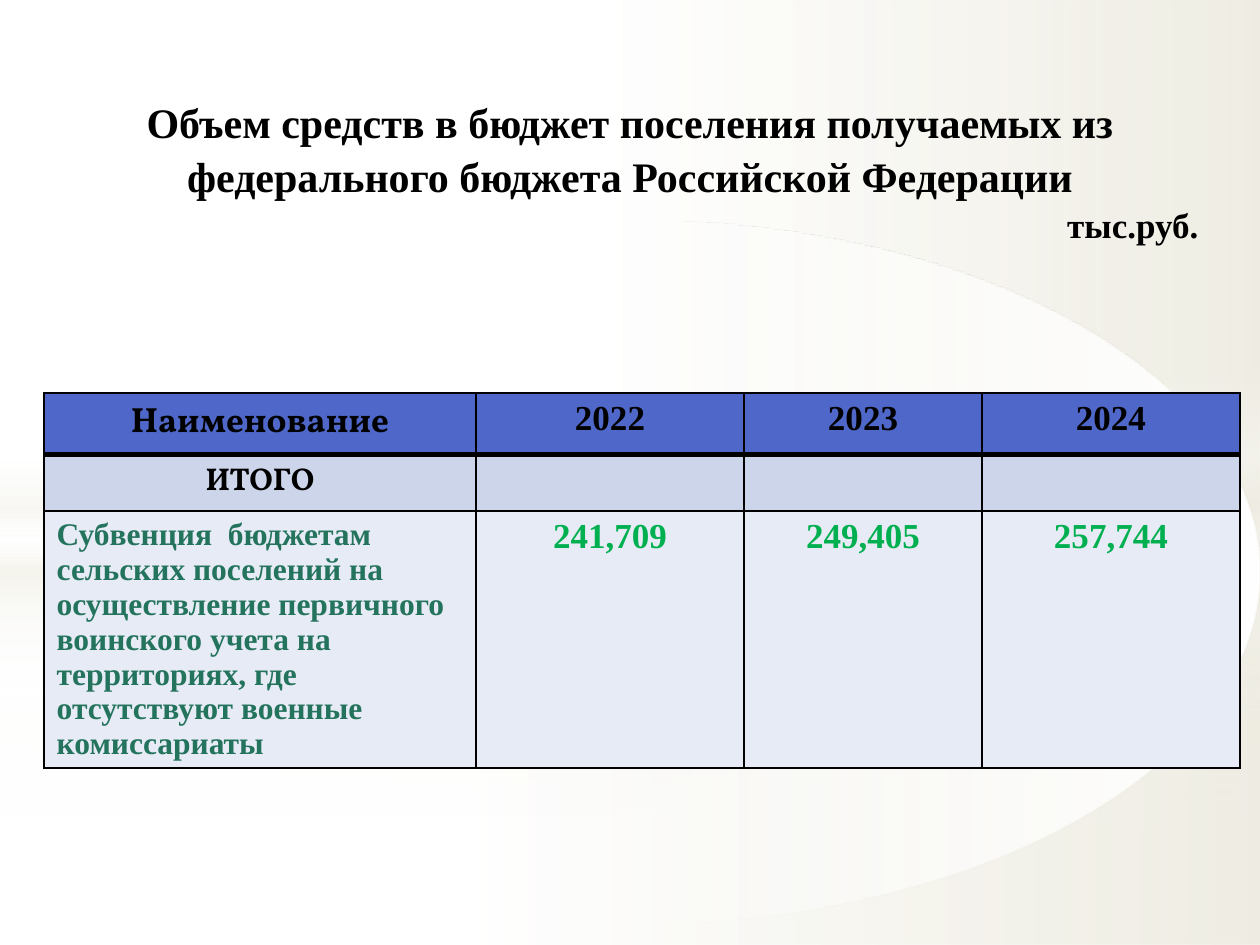
from lxml.etree import SubElement
from pptx import Presentation
from pptx.dml.color import RGBColor
from pptx.enum.shapes import MSO_SHAPE
from pptx.enum.text import MSO_ANCHOR, PP_ALIGN
from pptx.oxml import parse_xml
from pptx.oxml.ns import nsdecls, qn
from pptx.util import Pt

COLORS = {
    "white": "FFFFFF", "sand": "EEECE1", "black": "000000",
    "header": "4E67C8", "total": "CCD5EA", "body": "E7EBF5",
    "label": "23735D", "amount": "00B050",
}
SERIF = "Times New Roman"
DISPLAY = "Vollkorn"


def format_runs(paragraph, size, color, font_name=SERIF):
    for run in paragraph.runs:
        run.font.name = font_name
        run.font.size = Pt(size)
        run.font.bold = True
        run.font.color.rgb = RGBColor.from_string(COLORS[color])


def add_glow(slide, kind, top, height, angle, stops):
    """Add a full-width shape whose gradient stops are (position, color, opacity)."""
    shape = slide.shapes.add_shape(kind, 0, Pt(top), Pt(720), Pt(height))
    shape.shadow.inherit = False
    stop_xml = "".join(
        f'<a:gs pos="{position * 1000}"><a:srgbClr val="{COLORS[color]}">'
        f'<a:alpha val="{opacity * 1000}"/></a:srgbClr></a:gs>'
        for position, color, opacity in stops)
    gradient = parse_xml(
        f'<a:gradFill {nsdecls("a")} rotWithShape="1"><a:gsLst>{stop_xml}</a:gsLst>'
        f'<a:lin ang="{angle * 60000}" scaled="0"/></a:gradFill>')
    shape._element.spPr.insert(2, gradient)
    shape.line.fill.background()


presentation = Presentation()
presentation.slide_width = Pt(720)
presentation.slide_height = Pt(540)
slide = presentation.slides.add_slide(presentation.slide_layouts[6])

# Background: two layers, each of a lower wash, an upper wash, a band and an ellipse
band_stops = [(0, "white", 0), (29, "white", 30), (45, "sand", 40),
              (55, "white", 26), (65, "sand", 60), (100, "white", 0)]
for split, lower_height, band_top, fade_end, extra in [
        (401.76, 137.5, 296.6, 56, 0), (304.5, 235.5, 208.8, 54, 1)]:
    add_glow(slide, MSO_SHAPE.RECTANGLE, split, lower_height, 0,
             [(0, "white", 91 + extra), (37, "white", 76 + extra), (100, "sand", 79 + extra)])
    add_glow(slide, MSO_SHAPE.RECTANGLE, 0, split, 0,
             [(0, "white", 89 + extra), (48, "white", 62 + extra), (100, "sand", 79 + extra)])
    add_glow(slide, MSO_SHAPE.RECTANGLE, band_top, 180, 90, band_stops)
    add_glow(slide, MSO_SHAPE.OVAL, 126, 401.76, 180,
             [(0, "white", 100), (fade_end, "white", 0)])

# Table
rows = [
    ["Наименование", "2022", "2023", "2024"],
    ["ИТОГО", "", "", ""],
    ["Субвенция  бюджетам сельских поселений на осуществление первичного воинского "
     "учета на территориях, где отсутствуют военные комиссариаты",
     "241,709", "249,405", "257,744"],
]
column_widths = [246.8, 153.2, 136, 147.4]
row_heights = [29.5, 25.2, 146.9]
row_fills = ["header", "total", "body"]
# Size, color and font of the first cell, then of the other cells
row_styles = [
    [(20, "black", DISPLAY), (20, "black", SERIF)],
    [(18, "black", DISPLAY), (18, "black", SERIF)],
    [(18, "label", SERIF), (20, "amount", SERIF)],
]
table = slide.shapes.add_table(
    3, 4, Pt(25.2), Pt(224.6), Pt(sum(column_widths)), Pt(sum(row_heights))).table
for column, width in zip(table.columns, column_widths):
    column.width = Pt(width)
for row, height in zip(table.rows, row_heights):
    row.height = Pt(height)

for row_index, texts in enumerate(rows):
    heavy_side = {0: "lnB", 1: "lnT"}.get(row_index)
    for column_index, text in enumerate(texts):
        cell = table.cell(row_index, column_index)
        properties = cell._tc.get_or_add_tcPr()
        for side in ("lnL", "lnR", "lnT", "lnB"):
            line_width = Pt(3 if side == heavy_side else 0.96)
            border = SubElement(properties, qn(f"a:{side}"), w=str(line_width))
            border_fill = SubElement(border, qn("a:solidFill"))
            SubElement(border_fill, qn("a:srgbClr"), val=COLORS["black"])
        cell.fill.solid()
        cell.fill.fore_color.rgb = RGBColor.from_string(COLORS[row_fills[row_index]])
        if text:
            cell.text_frame.text = text
            paragraph = cell.text_frame.paragraphs[0]
            is_label = row_index == 2 and column_index == 0
            paragraph.alignment = PP_ALIGN.LEFT if is_label else PP_ALIGN.CENTER
            format_runs(paragraph, *row_styles[row_index][min(column_index, 1)])

# Title with the unit below it at the right
title = slide.shapes.add_textbox(0, Pt(43.2), Pt(720), Pt(107.3))
text_frame = title.text_frame
text_frame.word_wrap = True
text_frame.vertical_anchor = MSO_ANCHOR.MIDDLE
text_frame.text = ("Объем средств в бюджет поселения получаемых из "
                   "федерального бюджета Российской Федерации\nтыс.руб.")
heading, unit = text_frame.paragraphs
heading.alignment = PP_ALIGN.CENTER
format_runs(heading, 24, "black")
unit.alignment = PP_ALIGN.RIGHT
unit._p.get_or_add_pPr().set("marR", str(Pt(28)))
format_runs(unit, 20, "black")
for paragraph in (heading, unit):
    paragraph.line_spacing = 1.07

presentation.save("out.pptx")
